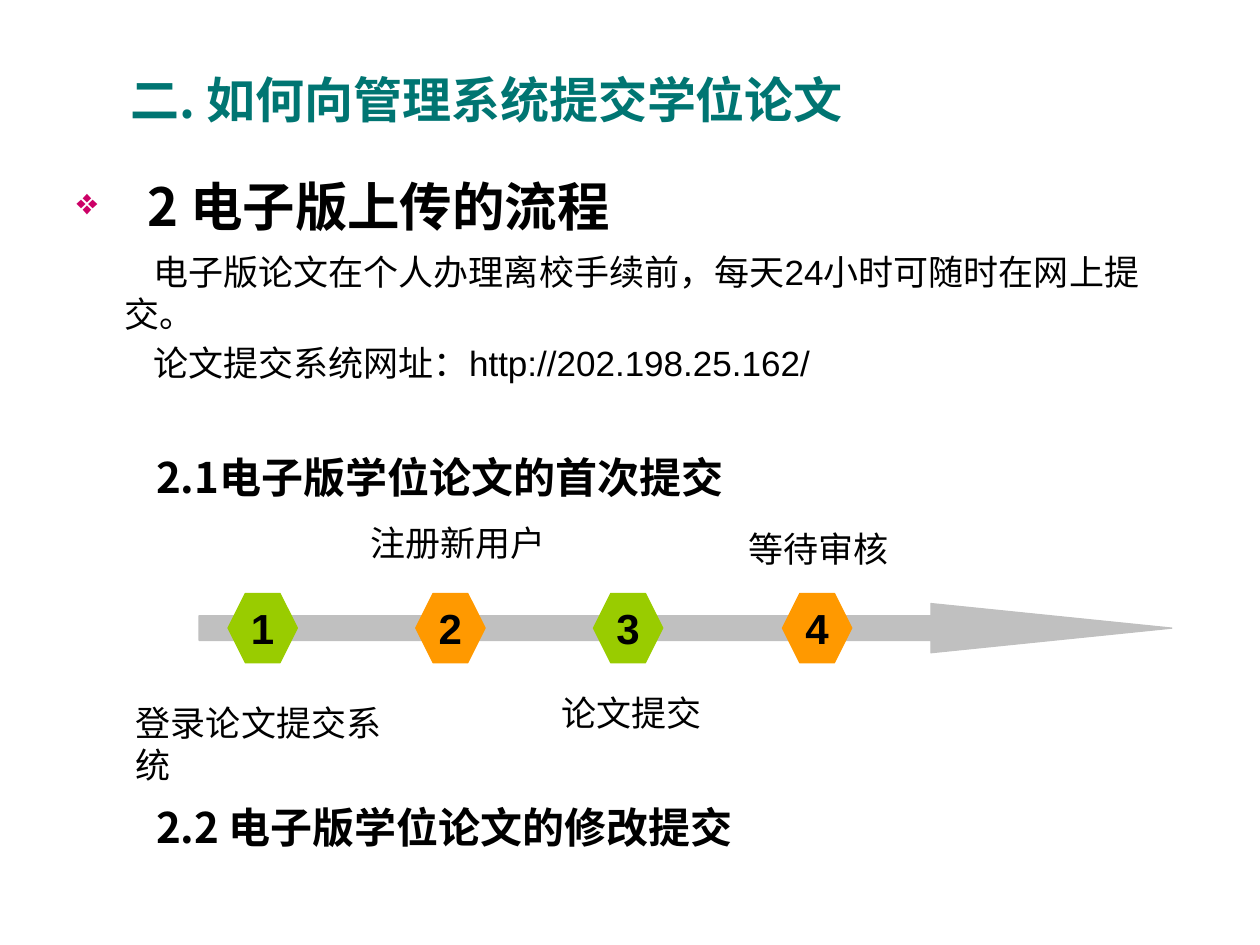
from dataclasses import dataclass

from lxml.etree import SubElement
from pptx import Presentation
from pptx.dml.color import RGBColor
from pptx.enum.shapes import MSO_SHAPE
from pptx.enum.text import MSO_ANCHOR, PP_ALIGN
from pptx.oxml.ns import qn
from pptx.util import Inches, Pt


@dataclass(frozen=True)
class Theme:
    heading_font: str = "Noto Sans CJK SC"
    body_font: str = "Arial"
    black: str = "000000"
    teal: str = "007572"
    pink: str = "CC0066"
    grey: str = "C0C0C0"
    green: str = "99CC00"
    orange: str = "FF9900"
    title_size: int = 28
    section_size: int = 30
    step_size: int = 24
    body_size: int = 20


THEME = Theme()


def add_span(para, text, size, color=THEME.black, font=THEME.body_font, bold=False):
    span = para.add_run()
    span.text = text
    span.font.size = Pt(size)
    span.font.name = font
    span.font.bold = bold
    span.font.color.rgb = RGBColor.from_string(color)
    if font == THEME.heading_font:
        SubElement(span.font._element, qn("a:ea"), typeface=font)


def add_box(page, left, top, width, height, wrap=True, anchor=MSO_ANCHOR.TOP):
    box = page.shapes.add_textbox(
        Inches(left), Inches(top), Inches(width), Inches(height))
    box.text_frame.word_wrap = wrap
    box.text_frame.vertical_anchor = anchor
    return box.text_frame


def set_indent(para, margin, first):
    properties = para._p.get_or_add_pPr()
    properties.set("marL", str(Inches(margin)))
    properties.set("indent", str(Inches(first)))
    return properties


def add_bullet(para, symbol, color, percent):
    properties = set_indent(para, 0.56, -0.56)
    bullet_color = SubElement(properties, qn("a:buClr"))
    SubElement(bullet_color, qn("a:srgbClr"), val=color)
    SubElement(properties, qn("a:buSzPct"), val=str(percent * 1000))
    SubElement(properties, qn("a:buChar"), char=symbol)


def add_heading(page, text, left, top, width, height, size, color=THEME.black):
    frame = add_box(page, left, top, width, height, anchor=MSO_ANCHOR.MIDDLE)
    add_span(frame.paragraphs[0], text, size, color, THEME.heading_font, True)


def add_introduction(page):
    frame = add_box(page, 0.51, 1.33, 8.74, 1.89)
    section = frame.paragraphs[0]
    add_bullet(section, "❖", THEME.pink, 70)
    add_span(section, "2 电子版上传的流程", THEME.section_size,
             font=THEME.heading_font, bold=True)

    for text, gap in (
        ("电子版论文在个人办理离校手续前，每天24小时可随时在网上提交。", 8),
        ("论文提交系统网址：http://202.198.25.162/", 4),
    ):
        para = frame.add_paragraph()
        set_indent(para, 0.38, 0.23)
        para.space_before = Pt(gap)
        add_span(para, text, THEME.body_size)


def add_solid(page, kind, left, top, width, height, color):
    shape = page.shapes.add_shape(
        kind, Inches(left), Inches(top), Inches(width), Inches(height))
    shape.shadow.inherit = False
    shape.fill.solid()
    shape.fill.fore_color.rgb = RGBColor.from_string(color)
    shape.line.color.rgb = RGBColor.from_string(color)
    shape.line.width = Pt(0.75)
    return shape


def add_step(page, number, left, color):
    hexagon = add_solid(page, MSO_SHAPE.HEXAGON, left, 4.71, 0.55, 0.55, color)
    hexagon.adjustments[0] = 0.25
    frame = hexagon.text_frame
    frame.word_wrap = False
    frame.vertical_anchor = MSO_ANCHOR.MIDDLE
    para = frame.paragraphs[0]
    para.alignment = PP_ALIGN.CENTER
    add_span(para, str(number), THEME.step_size, bold=True)


def add_label(page, text, left, top, width):
    frame = add_box(page, left, top, width, 0.43, wrap=False)
    add_span(frame.paragraphs[0], text, THEME.body_size)


def add_timeline(page):
    arrow = add_solid(page, MSO_SHAPE.RIGHT_ARROW, 1.58, 4.79, 7.72, 0.39, THEME.grey)
    arrow.adjustments[0] = 0.5
    arrow.adjustments[1] = 4.9

    # Step position, then label text, left, top and width
    steps = (
        (1.81, "登录论文提交系统", 0.98, 5.52, 2.42),
        (3.30, "注册新用户", 2.84, 4.09, 1.59),
        (4.71, "论文提交", 4.36, 5.44, 1.31),
        (6.21, "等待审核", 5.84, 4.14, 1.31),
    )
    for number, (left, *label) in enumerate(steps, start=1):
        add_step(page, number, left, THEME.green if number % 2 else THEME.orange)
        add_label(page, *label)


def main():
    deck = Presentation()
    deck.slide_width, deck.slide_height = Inches(10), Inches(7.5)
    page = deck.slides.add_slide(deck.slide_layouts[6])

    # Title and introduction
    add_heading(page, "二. 如何向管理系统提交学位论文", 0.94, 0.16, 8.34, 1.25,
                THEME.title_size, THEME.teal)
    add_introduction(page)

    # First submission and its steps
    add_heading(page, "2.1电子版学位论文的首次提交", 1.14, 3.49, 8.66, 0.58,
                THEME.step_size)
    add_timeline(page)

    # Revised submission
    add_heading(page, "2.2 电子版学位论文的修改提交", 1.14, 6.27, 8.66, 0.58,
                THEME.step_size)

    deck.save("out.pptx")


if __name__ == "__main__":
    main()
